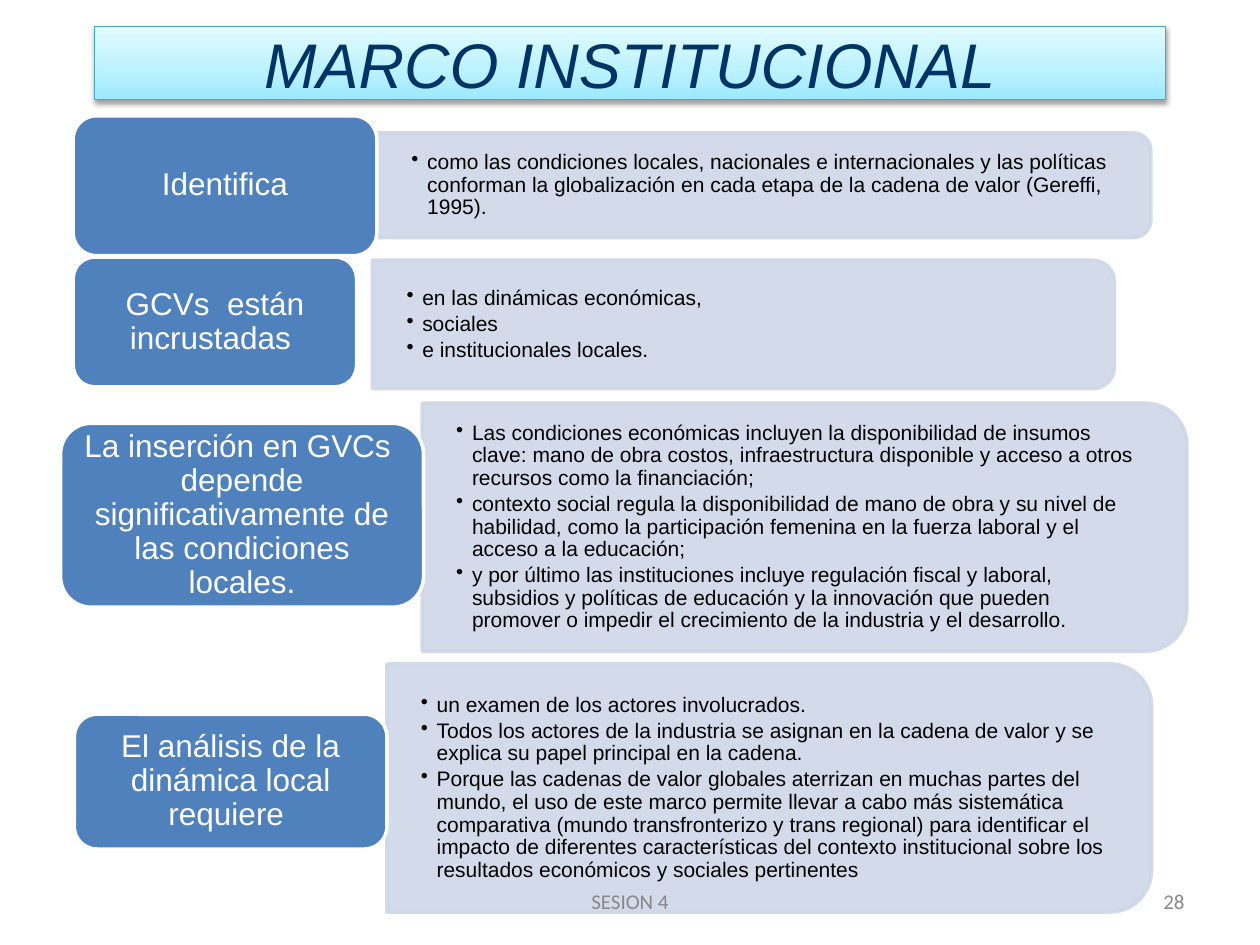
from copy import deepcopy

from lxml.etree import SubElement
from pptx import Presentation
from pptx.dml.color import RGBColor
from pptx.enum.shapes import MSO_SHAPE
from pptx.enum.text import MSO_ANCHOR, MSO_AUTO_SIZE, PP_ALIGN
from pptx.oxml.ns import qn
from pptx.util import Pt

BLUE, PALE, WHITE, BLACK = "4F81BD", "CFD7E7", "FFFFFF", "000000"
LABEL_INSETS = (5, 3, 5, 3)
PANEL_INSETS = (19.5, 10, 19.5, 10)

ROWS = [
    ("Identifica", (41.8, 66.2, 173.5, 79.9), (215.6, 76, 442, 59.8), [
        "como las condiciones locales, nacionales e internacionales y las políticas conforman "
        "la globalización en cada etapa de la cadena de valor (Gereffi, 1995).",
    ]),
    ("GCVs  están incrustadas ", (41.8, 146.9, 162, 74.2), (212.8, 148.7, 424, 73.4), [
        "en las dinámicas económicas,",
        "sociales",
        "e institucionales locales.",
    ]),
    ("La inserción en GVCs  depende significativamente de las condiciones locales.",
     (34.6, 241.9, 207.4, 105.1), (241.2, 230.4, 437, 141.8), [
        "Las condiciones económicas incluyen la disponibilidad de insumos clave: mano de obra "
        "costos, infraestructura disponible y acceso a otros recursos como la financiación;",
        "contexto social regula la disponibilidad de mano de obra y su nivel de habilidad, como "
        "la participación femenina en la fuerza laboral y el acceso a la educación;",
        "y por último las instituciones incluye regulación fiscal y laboral, subsidios y "
        "políticas de educación y la innovación que pueden promover o impedir el crecimiento "
        "de la industria y el desarrollo.",
    ]),
    ("El análisis de la dinámica local requiere ", (42.5, 408.2, 178.6, 77),
     (221, 379.4, 437, 141.8), [
        "un examen de los actores involucrados.",
        "Todos los actores de la industria se asignan en la cadena de valor y se explica su "
        "papel principal en la cadena.",
        "Porque las cadenas de valor globales aterrizan en muchas partes del mundo, el uso de "
        "este marco permite llevar a cabo más sistemática comparativa (mundo transfronterizo "
        "y trans regional) para identificar el impacto de diferentes características del "
        "contexto institucional sobre los resultados económicos y sociales pertinentes",
    ]),
]


def color(hex_text):
    return RGBColor.from_string(hex_text)


def lengths(box):
    return [Pt(value) for value in box]


def set_transparency(color_parent, percent):
    for color_element in color_parent.iter(qn("a:srgbClr")):
        SubElement(color_element, qn("a:alpha"), val=str((100 - percent) * 1000))


def write_text(shape, paragraphs, size, hex_color, font="Arial", italic=False,
               align=PP_ALIGN.CENTER, insets=(7.2, 3.6, 7.2, 3.6), spacing=None, bullets=False):
    frame = shape.text_frame
    frame.word_wrap = True
    frame.auto_size = MSO_AUTO_SIZE.NONE
    frame.vertical_anchor = MSO_ANCHOR.MIDDLE
    (frame.margin_left, frame.margin_top,
     frame.margin_right, frame.margin_bottom) = lengths(insets)
    for index, text in enumerate(paragraphs):
        paragraph = frame.add_paragraph() if index else frame.paragraphs[0]
        paragraph.alignment = align
        paragraph.line_spacing = spacing
        run = paragraph.add_run()
        run.text = text
        run.font.name = font
        run.font.size = Pt(size)
        run.font.italic = italic
        run.font.color.rgb = color(hex_color)
        if bullets:
            paragraph.space_before = Pt(1.8 if index else 0)
            properties = paragraph._p.get_or_add_pPr()
            properties.set("marL", str(Pt(9)))
            properties.set("indent", str(-Pt(9)))
            SubElement(properties, qn("a:buChar"), char="•")


def add_box(slide, kind, box, fill, line):
    shape = slide.shapes.add_shape(kind, *lengths(box))
    shape.shadow.inherit = False
    shape.fill.solid()
    shape.fill.fore_color.rgb = color(fill)
    shape.line.color.rgb = color(line)
    shape.line.width = Pt(2)
    return shape


def add_title(slide, box):
    title = slide.shapes.title
    title.left, title.top, title.width, title.height = lengths(box)
    title.fill.gradient()
    title.fill.gradient_angle = 90
    properties = title._element.spPr
    stop_list = properties.find(".//" + qn("a:gsLst"))
    stop_list.append(deepcopy(stop_list[0]))
    stops = [(0, "9BE9FF"), (0.35, "B8F1FF"), (1, "E2FBFF")]
    for stop, (position, shade) in zip(title.fill.gradient_stops, stops):
        stop.position = position
        stop.color.rgb = color(shade)
    title.line.color.rgb = color("45A9C4")
    title.line.width = Pt(0.75)
    effects = SubElement(properties, qn("a:effectLst"))
    shadow = SubElement(effects, qn("a:outerShdw"), blurRad=str(Pt(3.1)),
                        dist=str(Pt(1.6)), dir="5400000", rotWithShape="0")
    SubElement(shadow, qn("a:srgbClr"), val=BLACK)
    set_transparency(shadow, 62)
    write_text(title, ["MARCO INSTITUCIONAL"], 36, "003366", italic=True)


def add_panel(slide, box, items):
    left, top, width, height = box
    upright = (left + (width - height) / 2, top + (height - width) / 2, height, width)
    panel = add_box(slide, MSO_SHAPE.ROUND_2_SAME_RECTANGLE, upright, PALE, PALE)
    panel.rotation = 90
    set_transparency(panel._element.spPr, 10)
    corner = height / 6 * 0.29
    text_box = slide.shapes.add_textbox(
        *lengths((left, top + corner, width - corner, height - 2 * corner)))
    write_text(text_box, items, 12, BLACK, align=PP_ALIGN.LEFT,
               insets=PANEL_INSETS, spacing=0.9, bullets=True)


def add_row(slide, label, label_box, panel_box, items):
    add_panel(slide, panel_box, items)
    shape = add_box(slide, MSO_SHAPE.ROUNDED_RECTANGLE, label_box, BLUE, WHITE)
    write_text(shape, [label], 18, WHITE, insets=LABEL_INSETS, spacing=0.9)


def add_footer(slide, box, text, hex_color, align):
    text_box = slide.shapes.add_textbox(*lengths(box))
    write_text(text_box, [text], 12, hex_color, font="Calibri", align=align)


def main():
    presentation = Presentation()
    presentation.slide_width, presentation.slide_height = Pt(720), Pt(540)
    slide = presentation.slides.add_slide(presentation.slide_layouts[5])
    add_title(slide, (54, 15, 612, 42))
    for row in ROWS:
        add_row(slide, *row)
    add_footer(slide, (516, 500.5, 168, 28.75), "28", "898989", PP_ALIGN.RIGHT)
    add_footer(slide, (246, 500.5, 228, 28.75), "SESION 4", "888888", PP_ALIGN.CENTER)
    presentation.save("out.pptx")


if __name__ == "__main__":
    main()
